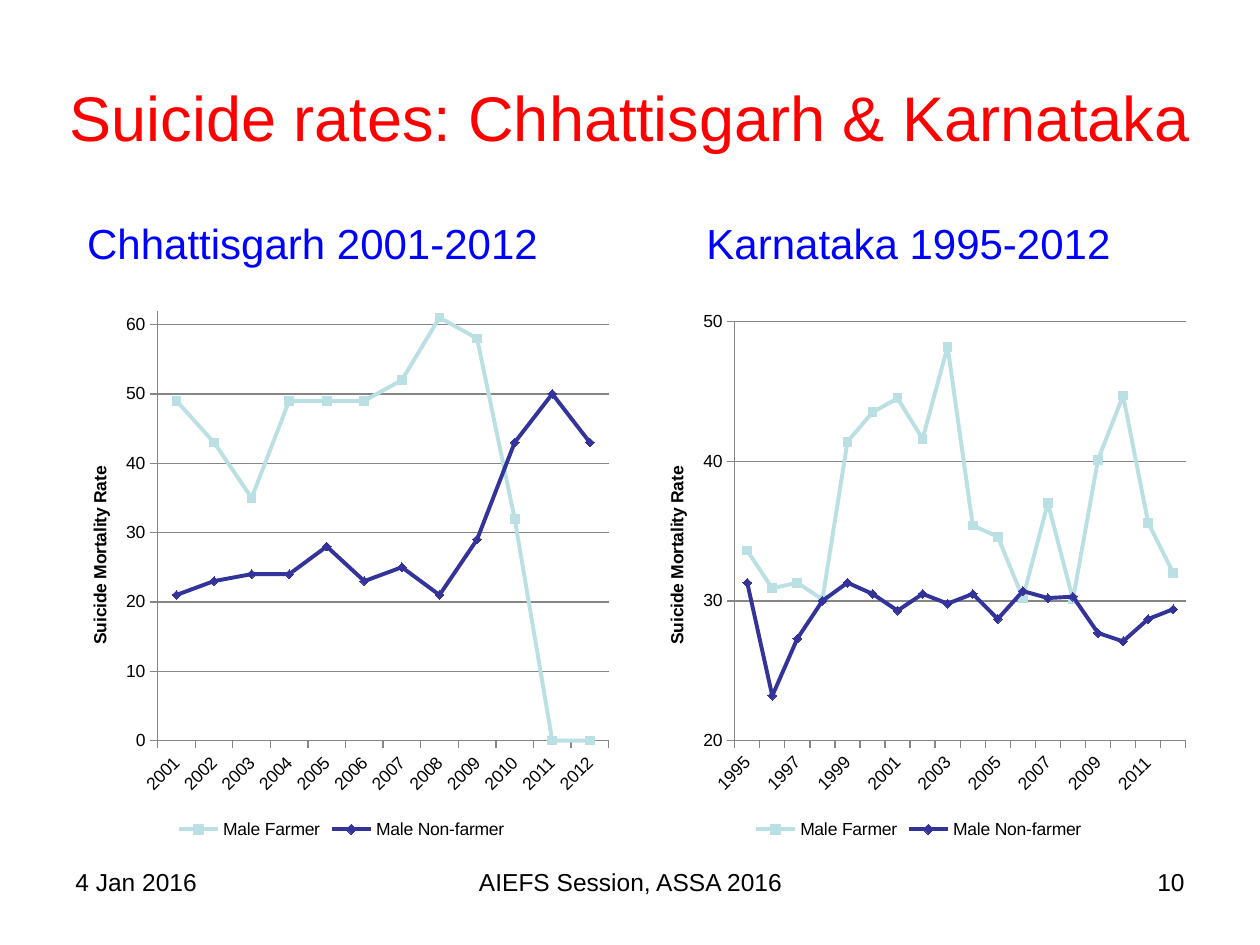
from pptx import Presentation
from pptx import util as u
from pptx.chart import data as chart_data
from pptx.dml.color import RGBColor
from pptx.enum import chart as ch, text
from pptx.oxml import parse_xml
from pptx.oxml.ns import nsdecls, qn

FONT = "Arial"
GRID_GREY = "868686"
CHART_W, CHART_H = 4.42, 4.32

# Each series style: name, colour, marker
SERIES = [
    ("Male Farmer", "BBE0E3", ch.XL_MARKER_STYLE.SQUARE),
    ("Male Non-farmer", "333399", ch.XL_MARKER_STYLE.DIAMOND),
]
CHHATTISGARH = {
    "years": range(2001, 2013), "low": 0, "high": 62, "label_skip": 1,
    "plot": {"x": 0.17, "y": 0.02, "w": 0.81, "h": 0.79},
    "rates": [
        [49, 43, 35, 49, 49, 49, 52, 61, 58, 32, 0, 0],
        [21, 23, 24, 24, 28, 23, 25, 21, 29, 43, 50, 43],
    ],
}
KARNATAKA = {
    "years": range(1995, 2013), "low": 20, "high": 50, "label_skip": 2,
    "plot": {"x": 0.17, "y": 0.04, "w": 0.81, "h": 0.77},
    "rates": [
        [33.6, 30.9, 31.3, 30.1, 41.4, 43.5, 44.5, 41.6, 48.2,
         35.4, 34.6, 30.2, 37, 30.1, 40.1, 44.7, 35.6, 32],
        [31.3, 23.2, 27.3, 30, 31.3, 30.5, 29.3, 30.5, 29.8,
         30.5, 28.7, 30.7, 30.2, 30.3, 27.7, 27.1, 28.7, 29.4],
    ],
}


def color(hex_value):
    return RGBColor.from_string(hex_value)


def inches(box):
    return [u.Inches(length) for length in box]


def set_all(target, values):
    for name, value in values.items():
        setattr(target, name, value)


def set_font(font, size, hex_value="000000", bold=False):
    set_all(font, {"name": FONT, "size": u.Pt(size), "bold": bold})
    font.color.rgb = color(hex_value)


def add_text(slide, box, words, size, hex_value="000000",
             align=text.PP_ALIGN.LEFT, anchor=text.MSO_ANCHOR.TOP):
    frame = slide.shapes.add_textbox(*inches(box)).text_frame
    set_all(frame, {"word_wrap": True, "vertical_anchor": anchor})
    paragraph = frame.paragraphs[0]
    paragraph.alignment = align
    run = paragraph.add_run()
    run.text = words
    set_font(run.font, size, hex_value)
    return paragraph


def place_manually(element, index, fractions, inner=False):
    """Fix the place of a chart part, as fractions of the chart."""
    for old in element.findall(qn("c:layout")):
        element.remove(old)
    target = '<c:layoutTarget val="inner"/>' if inner else ""
    modes = '<c:xMode val="edge"/><c:yMode val="edge"/>'
    sizes = "".join(f'<c:{k} val="{v}"/>' for k, v in fractions.items())
    element.insert(index, parse_xml(
        f'<c:layout {nsdecls("c")}><c:manualLayout>{target}{modes}{sizes}'
        '</c:manualLayout></c:layout>'))


def style_axes(chart, state):
    years, rate = chart.category_axis, chart.value_axis
    for axis in (years, rate):
        set_all(axis, {"major_tick_mark": ch.XL_TICK_MARK.OUTSIDE,
                       "minor_tick_mark": ch.XL_TICK_MARK.NONE})
        axis.format.line.color.rgb = color(GRID_GREY)
        set_font(axis.tick_labels.font, 10)

    # Slanted year labels, some of them skipped
    year_xml = years._element
    year_xml.find(qn("c:txPr")).find(qn("a:bodyPr")).set("rot", "-2700000")
    skip = parse_xml(f'<c:tickLblSkip {nsdecls("c")} val="{state["label_skip"]}"/>')
    year_xml.find(qn("c:noMultiLvlLbl")).addprevious(skip)

    # Rate scale, gridlines and title
    set_all(rate, {"minimum_scale": state["low"], "maximum_scale": state["high"],
                   "major_unit": 10, "has_major_gridlines": True})
    rate.major_gridlines.format.line.color.rgb = color(GRID_GREY)
    rate.tick_labels.number_format = "0"
    rate.tick_labels.number_format_is_linked = False
    rate_title = rate.axis_title
    rate_title.text_frame.text = "Suicide Mortality Rate"
    set_font(rate_title.text_frame.paragraphs[0].runs[0].font, 10, bold=True)
    place_manually(rate_title._element, 1, {"x": 0.04, "y": 0.3})


def add_rate_chart(slide, left, top, state):
    rates = chart_data.CategoryChartData()
    rates.categories = [str(year) for year in state["years"]]
    for (name, _, _), values in zip(SERIES, state["rates"]):
        rates.add_series(name, values)
    chart = slide.shapes.add_chart(
        ch.XL_CHART_TYPE.LINE_MARKERS,
        *inches((left, top, CHART_W, CHART_H)), rates).chart
    set_all(chart, {"has_title": False, "has_legend": True})
    set_font(chart.font, 10)
    set_all(chart.legend, {"position": ch.XL_LEGEND_POSITION.BOTTOM,
                           "include_in_layout": False})
    set_font(chart.legend.font, 10)
    style_axes(chart, state)

    plot = chart.plots[0]
    plot.vary_by_categories = False
    for line, (_, hex_value, marker) in zip(plot.series, SERIES):
        line.smooth = False
        line.format.line.width = u.Pt(2.25)
        line.format.line.color.rgb = color(hex_value)
        set_all(line.marker, {"style": marker, "size": 5})
        line.marker.format.fill.solid()
        line.marker.format.fill.fore_color.rgb = color(hex_value)
        line.marker.format.line.color.rgb = color(hex_value)
    plot_area = chart._chartSpace.chart.plotArea
    place_manually(plot_area, 0, state["plot"], inner=True)


def add_heading(slide, left, words):
    heading = add_text(slide, (left, 1.68, 4.42, 0.7), words, 24, "0000FF",
                       text.PP_ALIGN.CENTER)
    heading.space_before = u.Pt(4.8)


def add_footer(slide, top, height):
    align = text.PP_ALIGN
    for left, width, words, side in [
        (0.5, 2.33, "4 Jan 2016", align.LEFT),
        (3.42, 3.17, "AIEFS Session, ASSA 2016", align.CENTER),
        (7.17, 2.33, "10", align.RIGHT),
    ]:
        add_text(slide, (left, top, width, height), words, 14, align=side)


def main():
    deck = Presentation()
    set_all(deck, {"slide_width": u.Inches(10), "slide_height": u.Inches(7.5)})
    slide = deck.slides.add_slide(deck.slide_layouts[6])

    add_text(slide, (0, 0.3, 10, 1.25), "Suicide rates: Chhattisgarh & Karnataka",
             36, "FF0000", text.PP_ALIGN.CENTER, text.MSO_ANCHOR.MIDDLE)
    add_heading(slide, 0.27, "Chhattisgarh 2001-2012")
    add_heading(slide, 5, "Karnataka 1995-2012")
    add_rate_chart(slide, 0.5, 2.38, CHHATTISGARH)
    add_rate_chart(slide, 5.08, 2.38, KARNATAKA)
    add_footer(slide, 6.83, 0.52)
    deck.save("out.pptx")


if __name__ == "__main__":
    main()
